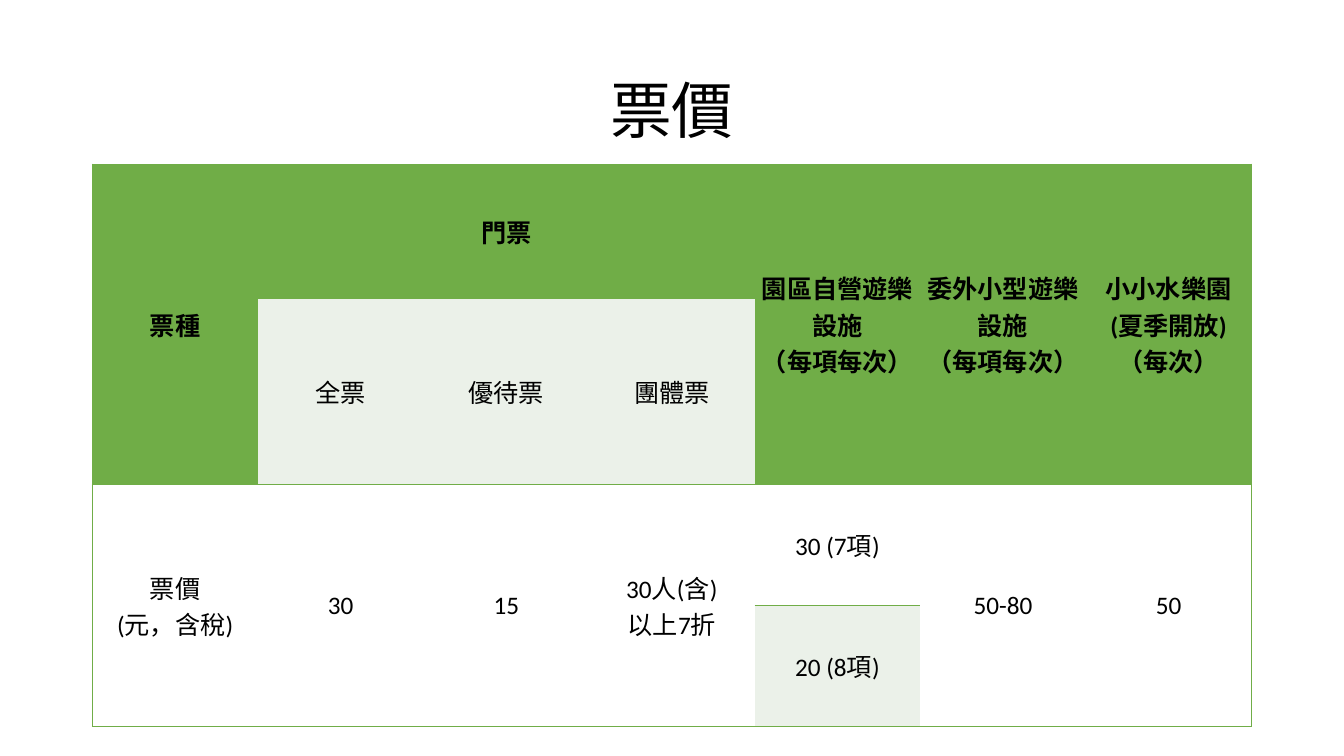
from dataclasses import dataclass
from itertools import product

from lxml import etree
from pptx import Presentation
from pptx.dml.color import RGBColor
from pptx.enum.text import MSO_ANCHOR, PP_ALIGN
from pptx.oxml.ns import qn
from pptx.table import Table
from pptx.text.text import _Paragraph
from pptx.util import Pt

CENTER = PP_ALIGN.CENTER
MIDDLE = MSO_ANCHOR.MIDDLE

GREEN = "70AD47"
PALE = "EBF1E9"
WHITE = "FFFFFF"
BLACK = "000000"
FONT = "Calibri"
PLAIN_TABLE_STYLE = "{2D5ABB26-0587-4C30-8999-92F81FD0307C}"

LEFT, WIDTH = 66, 828
COLUMN_COUNT = 7
ROW_HEIGHTS = (96.5, 132.3, 86.4, 86.4)
RULED_EDGES = (0, 2, 3, 4)
CELL_FORMAT = {
    "vertical_anchor": MIDDLE,
    "margin_left": Pt(2.2),
    "margin_right": Pt(2.2),
    "margin_top": Pt(2.2),
    "margin_bottom": Pt(2.2),
}


@dataclass(frozen=True)
class Fare:
    row: int
    column: int
    text: str
    fill: str = WHITE
    rows: int = 1
    columns: int = 1
    bold: bool = False


FARES = (
    Fare(0, 0, "票種", GREEN, rows=2, bold=True),
    Fare(0, 1, "門票", GREEN, columns=3, bold=True),
    Fare(0, 4, "園區自營遊樂設施\n（每項每次）", GREEN, rows=2, bold=True),
    Fare(0, 5, "委外小型遊樂設施\n（每項每次）", GREEN, rows=2, bold=True),
    Fare(0, 6, "小小水樂園\n(夏季開放)\n（每次）", GREEN, rows=2, bold=True),
    Fare(1, 1, "全票", PALE),
    Fare(1, 2, "優待票", PALE),
    Fare(1, 3, "團體票", PALE),
    Fare(2, 0, "票價\n(元，含稅)", rows=2),
    Fare(2, 1, "30", rows=2),
    Fare(2, 2, "15", rows=2),
    Fare(2, 3, "30人(含)\n以上7折", rows=2),
    Fare(2, 4, "30 (7項)"),
    Fare(2, 5, "50-80", rows=2),
    Fare(2, 6, "50", rows=2),
    Fare(3, 4, "20 (8項)", PALE),
)


def color(value: str) -> RGBColor:
    return RGBColor.from_string(value)


def apply_format(target: object, values: dict) -> None:
    for attribute, value in values.items():
        setattr(target, attribute, value)


def write(paragraph: _Paragraph, text: str, size: float, bold: bool = False) -> None:
    paragraph.text = text
    paragraph.alignment = CENTER
    for run in paragraph.runs:
        apply_format(run.font, {"name": FONT, "size": Pt(size), "bold": bold})
        run.font.color.rgb = color(BLACK)


def add_border(properties: etree._Element, side: str) -> None:
    line = etree.SubElement(properties, qn(f"a:ln{side}"), w=str(Pt(1)))
    paint = etree.SubElement(line, qn("a:solidFill"))
    etree.SubElement(paint, qn("a:srgbClr"), val=GREEN)


def draw_fare(prices: Table, fare: Fare) -> None:
    bottom, right = fare.row + fare.rows, fare.column + fare.columns
    ruled = {
        "L": fare.column == 0,
        "R": right == COLUMN_COUNT,
        "T": fare.row in RULED_EDGES,
        "B": bottom in RULED_EDGES,
    }
    for row, column in product(range(fare.row, bottom), range(fare.column, right)):
        cell = prices.cell(row, column)
        apply_format(cell, CELL_FORMAT)
        properties = cell._tc.get_or_add_tcPr()
        for side, visible in ruled.items():
            if visible:
                add_border(properties, side)
        cell.fill.solid()
        cell.fill.fore_color.rgb = color(fare.fill)
    origin = prices.cell(fare.row, fare.column)
    if fare.rows * fare.columns > 1:
        origin.merge(prices.cell(bottom - 1, right - 1))
    write(origin.text_frame.paragraphs[0], fare.text, 18, fare.bold)


def main() -> None:
    deck = Presentation()
    apply_format(deck, {"slide_width": Pt(960), "slide_height": Pt(540)})
    slide = deck.slides.add_slide(deck.slide_layouts[5])

    heading = slide.shapes.title
    apply_format(heading, {
        "left": Pt(LEFT), "top": Pt(28.8), "width": Pt(WIDTH), "height": Pt(104.4),
    })
    heading.text_frame.vertical_anchor = MIDDLE
    heading_line = heading.text_frame.paragraphs[0]
    write(heading_line, "票價", 44)
    heading_line.line_spacing = 0.9

    prices = slide.shapes.add_table(
        len(ROW_HEIGHTS), COLUMN_COUNT,
        Pt(LEFT), Pt(117.2), Pt(WIDTH), Pt(sum(ROW_HEIGHTS)),
    ).table
    apply_format(prices, {"first_row": False, "horz_banding": False})
    prices._tbl.tblPr.find(qn("a:tableStyleId")).text = PLAIN_TABLE_STYLE
    for column in prices.columns:
        column.width = Pt(WIDTH / COLUMN_COUNT)
    for row, height in zip(prices.rows, ROW_HEIGHTS):
        row.height = Pt(height)
    for fare in FARES:
        draw_fare(prices, fare)

    deck.save("out.pptx")


if __name__ == "__main__":
    main()
